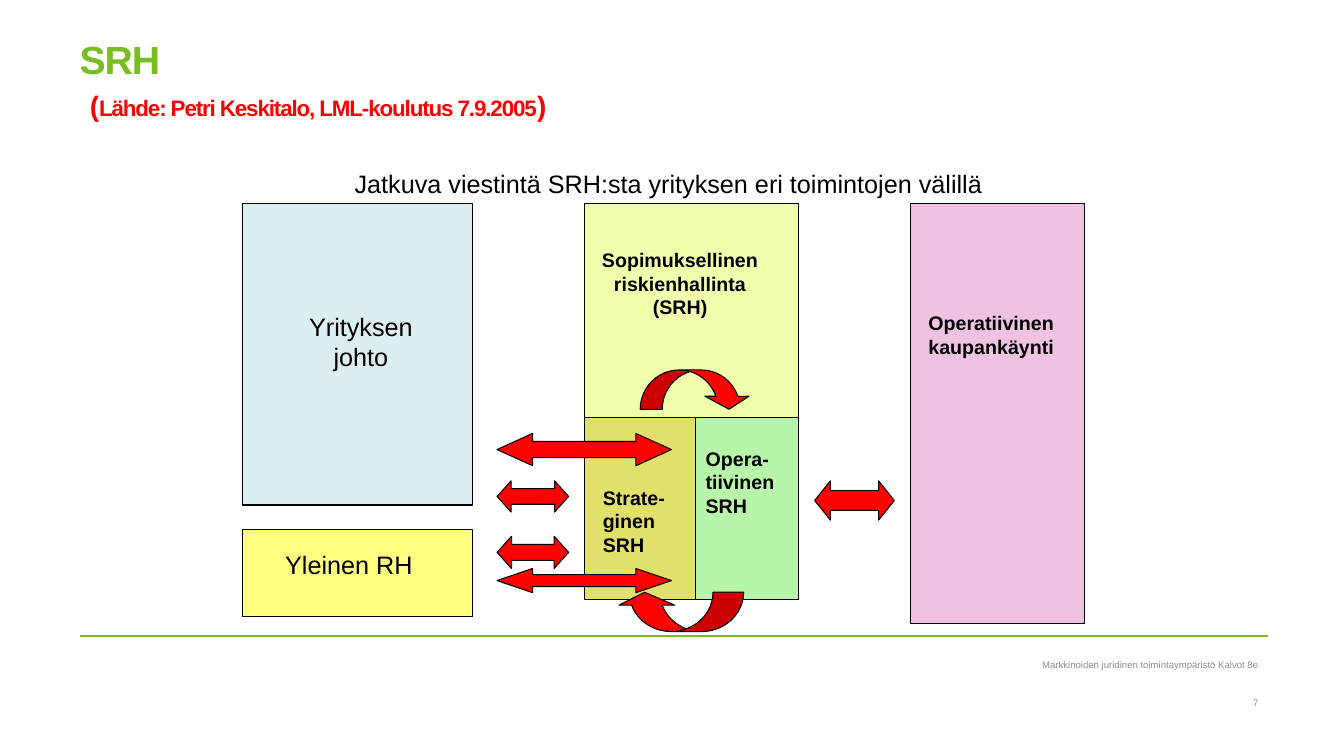
from lxml import etree
from pptx import Presentation
from pptx.dml.color import RGBColor
from pptx.enum.shapes import MSO_CONNECTOR, MSO_SHAPE as SHAPE
from pptx.enum.text import MSO_ANCHOR as ANCHOR, PP_ALIGN as ALIGN
from pptx.oxml.ns import qn
from pptx.util import Inches, Pt

COLORS = {
    "green": "78BE20", "red": "FF0000", "black": "000000", "grey": "8C8C8C",
    "blue": "BBE0E3", "yellow": "FFFF00", "pink": "E187C3", "lime": "E4FF5D",
    "olive": "E0E06A", "mint": "B8F4AA",
}
FONT = "Arial"

# Title lines: runs of (text, size, colour)
TITLE = [
    [("SRH", 28, "green")],
    [("(", 20, "red"), ("Lähde: Petri Keskitalo, LML-koulutus 7.9.2005", 16, "red"),
     (")", 20, "red")],
]

# Boxes: left, top, width, height, colour, opacity in percent
BOXES = [
    (2.41, 2.02, 2.28, 2.99, "blue", 50),
    (2.41, 5.25, 2.28, 0.87, "yellow", 50),
    (9.03, 2.02, 1.73, 4.17, "pink", 50),
    (5.8, 2.02, 2.12, 2.13, "lime", 50),
    (5.8, 4.14, 1.1, 1.81, "olive", 100),
    (6.9, 4.14, 1.02, 1.81, "mint", 100),
]

# Arrows: shape, left, top, width, height, adjustments, rotation
ARROWS = [
    (SHAPE.LEFT_RIGHT_ARROW, 4.93, 4.3, 1.73, 0.32, (0.5, 1.1), 0),
    (SHAPE.LEFT_RIGHT_ARROW, 4.93, 4.77, 0.71, 0.31, (0.5, 0.45), 0),
    (SHAPE.LEFT_RIGHT_ARROW, 4.93, 5.32, 0.71, 0.32, (0.5, 0.45), 0),
    (SHAPE.LEFT_RIGHT_ARROW, 4.93, 5.64, 1.73, 0.24, (0.5, 1.47), 0),
    (SHAPE.LEFT_RIGHT_ARROW, 8.08, 4.77, 0.79, 0.39, (0.5, 0.4), 0),
    (SHAPE.CURVED_DOWN_ARROW, 6.35, 3.67, 1.1, 0.39, (0.56, 1.12, 0.33), 0),
    (SHAPE.CURVED_LEFT_ARROW, 6.55, 5.44, 0.39, 1.26, (0.78, 1.42, 0.33), 90),
]

# Labels: paragraphs, left, top, width, height, size, bold, alignment
LABELS = [
    (["Jatkuva viestintä SRH:sta yrityksen eri toimintojen välillä"],
     2.81, 1.62, 7.64, 0.4, 18, False, ALIGN.CENTER),
    (["Yrityksen", "johto"], 2.95, 3.04, 1.26, 0.7, 18, False, ALIGN.CENTER),
    (["Yleinen RH"], 2.73, 5.4, 1.73, 0.4, 18, False, ALIGN.LEFT),
    (["Sopimuksellinen", "riskienhallinta", "(SRH)"],
     5.8, 2.41, 1.89, 0.81, 14, True, ALIGN.CENTER),
    (["Strate-ginen SRH"], 5.88, 4.77, 0.95, 0.81, 14, True, ALIGN.LEFT),
    (["Opera-tiivinen SRH"], 6.9, 4.38, 0.94, 0.81, 14, True, ALIGN.LEFT),
    (["Operatiivinen kaupankäynti"], 9.11, 3.04, 1.5, 0.57, 14, True, ALIGN.LEFT),
]

# Footer: text, top
FOOTERS = [("Markkinoiden juridinen toimintaympäristö Kalvot 8e", 6.51), ("7", 6.89)]


def color(name):
    return RGBColor.from_string(COLORS[name])


def style(font, size, name, bold=False):
    font.name, font.size, font.bold = FONT, Pt(size), bold
    font.color.rgb = color(name)


def add_filled(kind, left, top, width, height, fill):
    s = shapes.add_shape(kind, Inches(left), Inches(top), Inches(width), Inches(height))
    s.shadow.inherit = False
    s.fill.solid()
    s.fill.fore_color.rgb = color(fill)
    s.line.color.rgb = color("black")
    s.line.width = Pt(0.75)
    return s


def add_label(lines, left, top, width, height, size, bold, align, name="black"):
    s = shapes.add_textbox(Inches(left), Inches(top), Inches(width), Inches(height))
    tf = s.text_frame
    tf.word_wrap = True
    tf.text = "\n".join(lines)
    for p in tf.paragraphs:
        p.alignment = align
        style(p.runs[0].font, size, name, bold)
    return tf


prs = Presentation()
prs.slide_width, prs.slide_height = Inches(13.33), Inches(7.5)
slide = prs.slides.add_slide(prs.slide_layouts[5])
shapes = slide.shapes

# Footer rule
rule = shapes.add_connector(MSO_CONNECTOR.STRAIGHT, Inches(0.79), Inches(6.31),
                            Inches(12.58), Inches(6.31))
rule.line.color.rgb = color("green")
rule.line.width = Pt(1)
etree.SubElement(rule._element.spPr, qn("a:effectLst"))

# Title
title = shapes.title
title.left, title.top = Inches(0.79), Inches(0.42)
title.width, title.height = Inches(11.79), Inches(1.31)
tf = title.text_frame
tf.margin_left = tf.margin_right = tf.margin_top = tf.margin_bottom = 0
tf.vertical_anchor = ANCHOR.TOP
tf.word_wrap = True
for i, runs in enumerate(TITLE):
    p = tf.add_paragraph() if i else tf.paragraphs[0]
    p.alignment = ALIGN.LEFT
    p.line_spacing = 0.85
    if i:
        p.space_before = Pt(8)
        p._p.get_or_add_pPr().set("marL", str(Inches(0.1)))
    for text, size, name in runs:
        r = p.add_run()
        r.text = text
        style(r.font, size, name, True)
        r._r.get_or_add_rPr().set("spc", "-80")

# Footer texts
for text, top in FOOTERS:
    tf = add_label([text], 7.2, top, 5.28, 0.17, 6.8, False, ALIGN.RIGHT, "grey")
    tf.margin_right = 0
    tf.vertical_anchor = ANCHOR.MIDDLE

# Diagram: boxes, arrows, labels
for *place, fill, opacity in BOXES:
    s = add_filled(SHAPE.RECTANGLE, *place, fill)
    if opacity < 100:
        rgb = s._element.spPr.find(f"{qn('a:solidFill')}/{qn('a:srgbClr')}")
        etree.SubElement(rgb, qn("a:alpha")).set("val", str(opacity * 1000))

for kind, *place, adjustments, rotation in ARROWS:
    s = add_filled(kind, *place, "red")
    s.rotation = rotation
    for i, value in enumerate(adjustments):
        s.adjustments[i] = value

for label in LABELS:
    add_label(*label)

prs.save("out.pptx")
